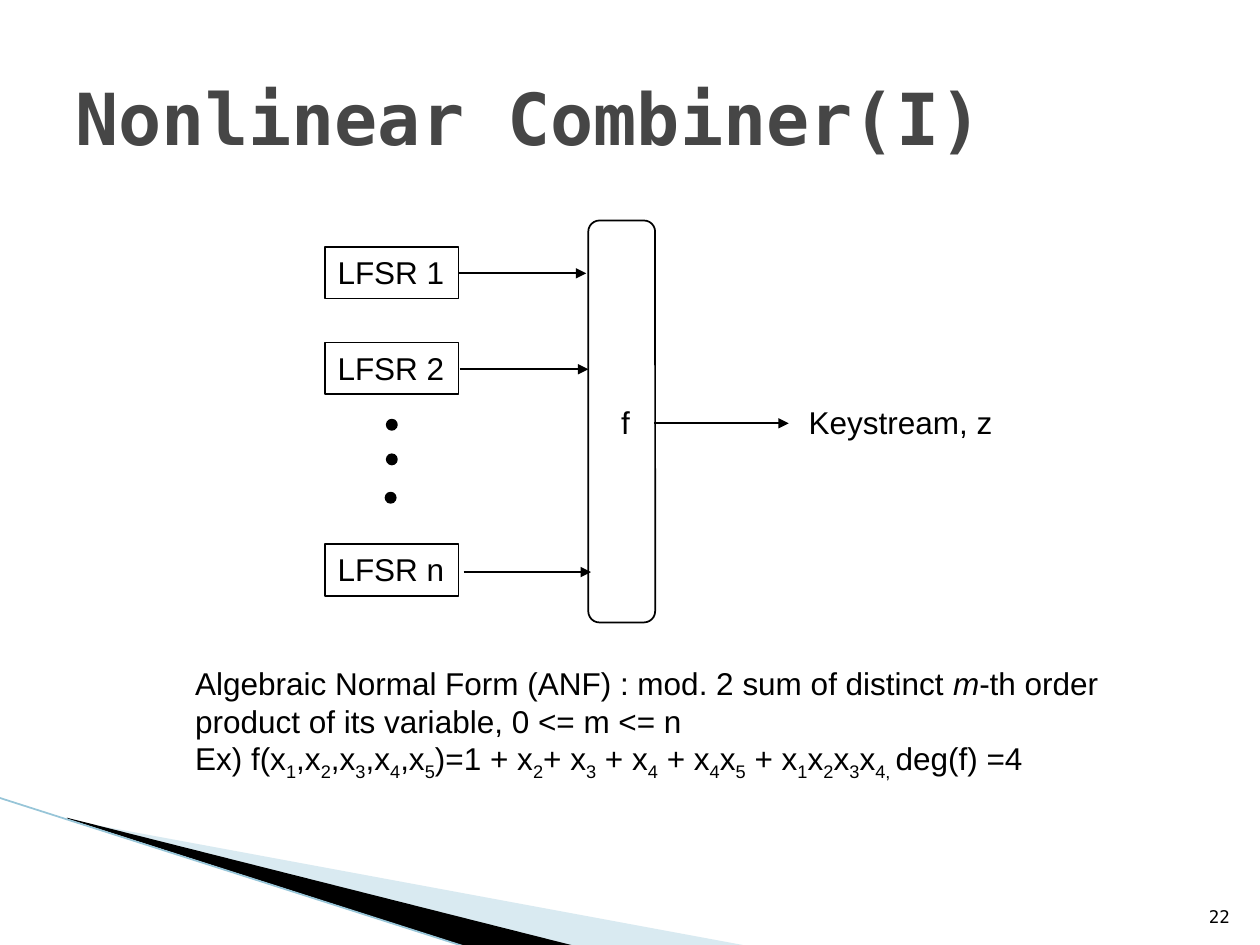
from dataclasses import dataclass

from lxml.etree import SubElement
from pptx import Presentation
from pptx.dml.color import RGBColor
from pptx.enum.shapes import MSO_CONNECTOR, MSO_SHAPE
from pptx.enum.text import MSO_ANCHOR, PP_ALIGN
from pptx.oxml.ns import qn
from pptx.util import Pt


@dataclass(frozen=True)
class Theme:
    ink: str = "000000"
    title_color: str = "464646"
    pale_blue: str = "A0CBDC"
    edge_blue: str = "97C5D8"
    body_font: str = "Arial"
    title_font: str = "DejaVu Sans Mono"
    title_size: float = 41
    body_size: float = 18
    number_size: float = 10
    line_width: float = 1


THEME = Theme()


def write_text(frame, text, size=THEME.body_size, font=THEME.body_font,
               color=THEME.ink, bold=False, align=PP_ALIGN.LEFT,
               anchor=MSO_ANCHOR.TOP, wrap=False, italic_mark="*", subscript_mark="|"):
    frame.word_wrap = wrap
    frame.vertical_anchor = anchor
    for index, line in enumerate(text.split("\n")):
        paragraph = frame.paragraphs[0] if index == 0 else frame.add_paragraph()
        paragraph.alignment = align
        mark = italic_mark if italic_mark in line else subscript_mark
        for position, piece in enumerate(line.split(mark)):
            run = paragraph.add_run()
            run.text = piece
            run.font.size = Pt(size)
            run.font.name = font
            run.font.bold = bold
            run.font.color.rgb = RGBColor.from_string(color)
            if position % 2 and mark == italic_mark:
                run.font.italic = True
            elif position % 2:
                run.font._element.set("baseline", "-25000")


class SlideBuilder:
    def __init__(self, slide, theme):
        self.slide = slide
        self.theme = theme

    def title(self, text, left, top, width, height):
        shape = self.slide.shapes.title
        shape.left, shape.top = Pt(left), Pt(top)
        shape.width, shape.height = Pt(width), Pt(height)
        write_text(shape.text_frame, text, size=self.theme.title_size,
                   font=self.theme.title_font, color=self.theme.title_color,
                   bold=True, anchor=MSO_ANCHOR.MIDDLE, wrap=True)

    def text(self, text, left, top, width, height, **style):
        shape = self.slide.shapes.add_textbox(Pt(left), Pt(top), Pt(width), Pt(height))
        write_text(shape.text_frame, text, **style)

    def shape(self, kind, left, top, width, height, fill=None, text=None):
        shape = self.slide.shapes.add_shape(kind, Pt(left), Pt(top), Pt(width), Pt(height))
        shape.shadow.inherit = False
        self.fill(shape, fill)
        shape.line.color.rgb = RGBColor.from_string(self.theme.ink)
        shape.line.width = Pt(self.theme.line_width)
        if text:
            write_text(shape.text_frame, text)
        return shape

    def fill(self, shape, color):
        if color:
            shape.fill.solid()
            shape.fill.fore_color.rgb = RGBColor.from_string(color)
        else:
            shape.fill.background()

    def polygon(self, points, color, opacity=None):
        start, *rest = [(Pt(x), Pt(y)) for x, y in points]
        builder = self.slide.shapes.build_freeform(*start)
        builder.add_line_segments(rest, close=True)
        shape = builder.convert_to_shape()
        shape.shadow.inherit = False
        shape.line.fill.background()
        self.fill(shape, color)
        if opacity:
            color_element = shape._element.spPr.find(qn("a:solidFill"))[0]
            SubElement(color_element, qn("a:alpha"), val=str(opacity * 1000))

    def line(self, start, end, color=THEME.ink, arrow=False):
        connector = self.slide.shapes.add_connector(
            MSO_CONNECTOR.STRAIGHT, *(Pt(value) for value in (*start, *end)))
        connector.line.color.rgb = RGBColor.from_string(color)
        connector.line.width = Pt(self.theme.line_width)
        if arrow:
            SubElement(connector.line._get_or_add_ln(), qn("a:tailEnd"), type="triangle")
        SubElement(connector._element.spPr, qn("a:effectLst"))


def draw_corner(builder):
    builder.polygon([(39.6, 468.7), (428.4, 540.7), (328.3, 540.7), (39.6, 468)],
                    builder.theme.pale_blue, opacity=40)
    builder.polygon([(38.2, 467.3), (329, 540.7), (267.8, 541.4), (38.9, 468)],
                    builder.theme.ink)
    builder.line((-0.7, 455.8), (267.1, 541.4), color=builder.theme.edge_blue)


def draw_combiner(builder):
    registers = [("LFSR 1", 141.1, 262, 335, 156.2),
                 ("LFSR 2", 195.8, 262.8, 336.2, 211),
                 ("LFSR n", 311, 265, 337.7, 326.9)]
    for name, top, arrow_start, arrow_end, arrow_y in registers:
        builder.shape(MSO_SHAPE.RECTANGLE, 185.8, top, 76.3, 29.5, text=name)
        builder.line((arrow_start, arrow_y), (arrow_end, arrow_y), arrow=True)

    combiner = builder.shape(MSO_SHAPE.ROUNDED_RECTANGLE, 336.2, 126, 38.2, 229.7)
    combiner.adjustments[0] = 0.167
    builder.text("f", 347.8, 226.8, 19.4, 29)
    builder.line((373.7, 241.9), (450.7, 241.9), arrow=True)
    builder.text("Keystream, z", 455, 226.8, 119.5, 29)

    for left, top in [(221, 239.8), (221, 259.6), (220.3, 281.5)]:
        builder.shape(MSO_SHAPE.FLOWCHART_CONNECTOR, left, top, 5.8, 5.8,
                      fill=builder.theme.ink)


def main():
    presentation = Presentation()
    presentation.slide_width, presentation.slide_height = Pt(720), Pt(540)
    slide = presentation.slides.add_slide(presentation.slide_layouts[5])
    builder = SlideBuilder(slide, THEME)

    draw_corner(builder)
    builder.title("Nonlinear Combiner(I)", 36, 21.6, 648, 90)
    draw_combiner(builder)
    builder.text(
        "Algebraic Normal Form (ANF) : mod. 2 sum of distinct *m*-th order\n"
        "product of its variable, 0 <= m <= n\n"
        "Ex) f(x|1|,x|2|,x|3|,x|4|,x|5|)=1 + x|2|+ x|3| + x|4| + x|4|x|5|"
        " + x|1|x|2|x|3|x|4, |deg(f) =4",
        104.4, 375.8, 533.5, 93.6, wrap=True)
    builder.text("22", 681.1, 504.7, 28.8, 28.8, size=THEME.number_size,
                 font=THEME.title_font, align=PP_ALIGN.RIGHT,
                 anchor=MSO_ANCHOR.BOTTOM, wrap=True)
    presentation.save("out.pptx")


if __name__ == "__main__":
    main()
